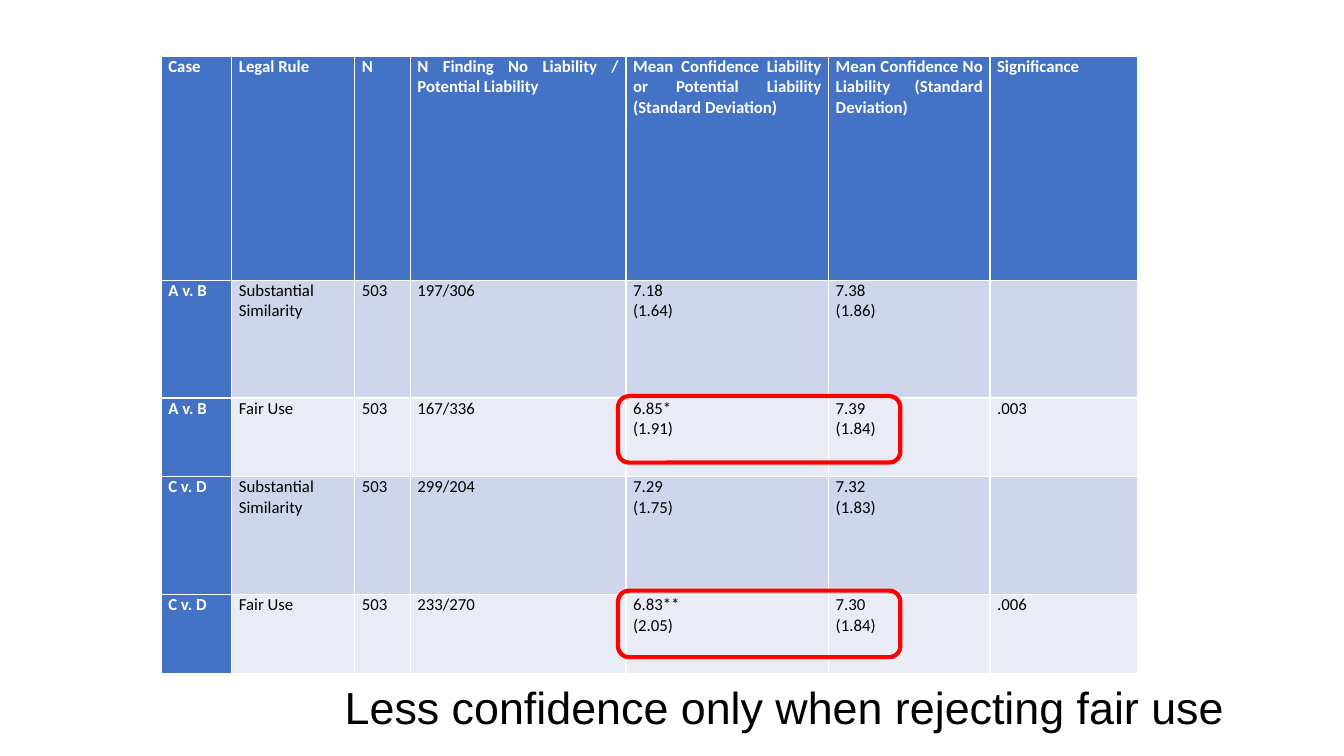
from pptx import Presentation
from pptx.dml.color import RGBColor
from pptx.enum.shapes import MSO_SHAPE
from pptx.enum.text import MSO_AUTO_SIZE, PP_ALIGN
from pptx.util import Inches, Pt

JUSTIFY = PP_ALIGN.JUSTIFY
GROW = MSO_AUTO_SIZE.SHAPE_TO_FIT_TEXT
ROUND = MSO_SHAPE.ROUNDED_RECTANGLE

THEME = {
    "head": RGBColor(0x44, 0x72, 0xC4),
    "bands": [RGBColor(0xE9, 0xEB, 0xF5), RGBColor(0xCF, 0xD5, 0xEA)],
    "light": RGBColor(0xFF, 0xFF, 0xFF),
    "dark": RGBColor(0, 0, 0),
    "mark": RGBColor(0xFF, 0, 0),
    "table": ("Calibri", Pt(12)),
    "note": ("Arial", Pt(32)),
}

COLS = [0.7, 1.22, 0.55, 2.14, 2.01, 1.6, 1.46]
ROWS = [2.22, 1.17, 0.78, 1.17, 0.78]
LEFT, TOP = 1.6, 0.56

DATA = [
    ["Case", "Legal Rule", "N", "N Finding No Liability / Potential Liability",
     "Mean Confidence Liability or Potential Liability (Standard Deviation)",
     "Mean Confidence No Liability (Standard Deviation)", "Significance"],
    ["A v. B", "Substantial Similarity", "503", "197/306",
     "7.18\n(1.64)", "7.38\n(1.86)", ""],
    ["A v. B", "Fair Use", "503", "167/336",
     "6.85*\n(1.91)", "7.39\n(1.84)", ".003"],
    ["C v. D", "Substantial Similarity", "503", "299/204",
     "7.29\n(1.75)", "7.32\n(1.83)", ""],
    ["C v. D", "Fair Use", "503", "233/270",
     "6.83**\n(2.05)", "7.30\n(1.84)", ".006"],
]


def add_run(para, text, font, color, bold=False):
    run = para.add_run()
    run.text = text
    run.font.name, run.font.size = font
    run.font.color.rgb = color
    run.font.bold = bold


deck = Presentation()
deck.slide_width, deck.slide_height = Inches(13.33), Inches(7.5)
slide = deck.slides.add_slide(deck.slide_layouts[6])
shapes = slide.shapes

# Results table: the built-in style draws the white rules
frame = shapes.add_table(len(ROWS), len(COLS), Inches(LEFT), Inches(TOP),
                         Inches(sum(COLS)), Inches(sum(ROWS)))
table = frame.table
table.first_col = True
for col, width in zip(table.columns, COLS):
    col.width = Inches(width)
for row, height in zip(table.rows, ROWS):
    row.height = Inches(height)

for r, line in enumerate(DATA):
    for c, text in enumerate(line):
        cell = table.cell(r, c)
        head = r == 0 or c == 0
        cell.margin_left = cell.margin_right = Inches(0.07)
        cell.margin_top = cell.margin_bottom = 0
        cell.fill.solid()
        cell.fill.fore_color.rgb = THEME["head"] if head else THEME["bands"][r % 2]
        if not text:
            continue
        body = cell.text_frame
        for i, part in enumerate(text.split("\n")):
            para = body.add_paragraph() if i else body.paragraphs[0]
            para.alignment = JUSTIFY
            add_run(para, part, THEME["table"],
                    THEME["light"] if head else THEME["dark"], head)

# Rings around the means of both fair use rows
for top in (3.93, 5.86):
    ring = shapes.add_shape(ROUND, Inches(6.13), Inches(top),
                            Inches(2.8), Inches(0.66))
    ring.shadow.inherit = False
    ring.fill.background()
    ring.line.color.rgb = THEME["mark"]
    ring.line.width = Pt(3)

note = shapes.add_textbox(Inches(3.32), Inches(6.69), Inches(9.12), Inches(0.64))
body = note.text_frame
body.word_wrap = False
body.auto_size = GROW
add_run(body.paragraphs[0], "Less confidence only when rejecting fair use",
        THEME["note"], THEME["dark"])

deck.save("out.pptx")
